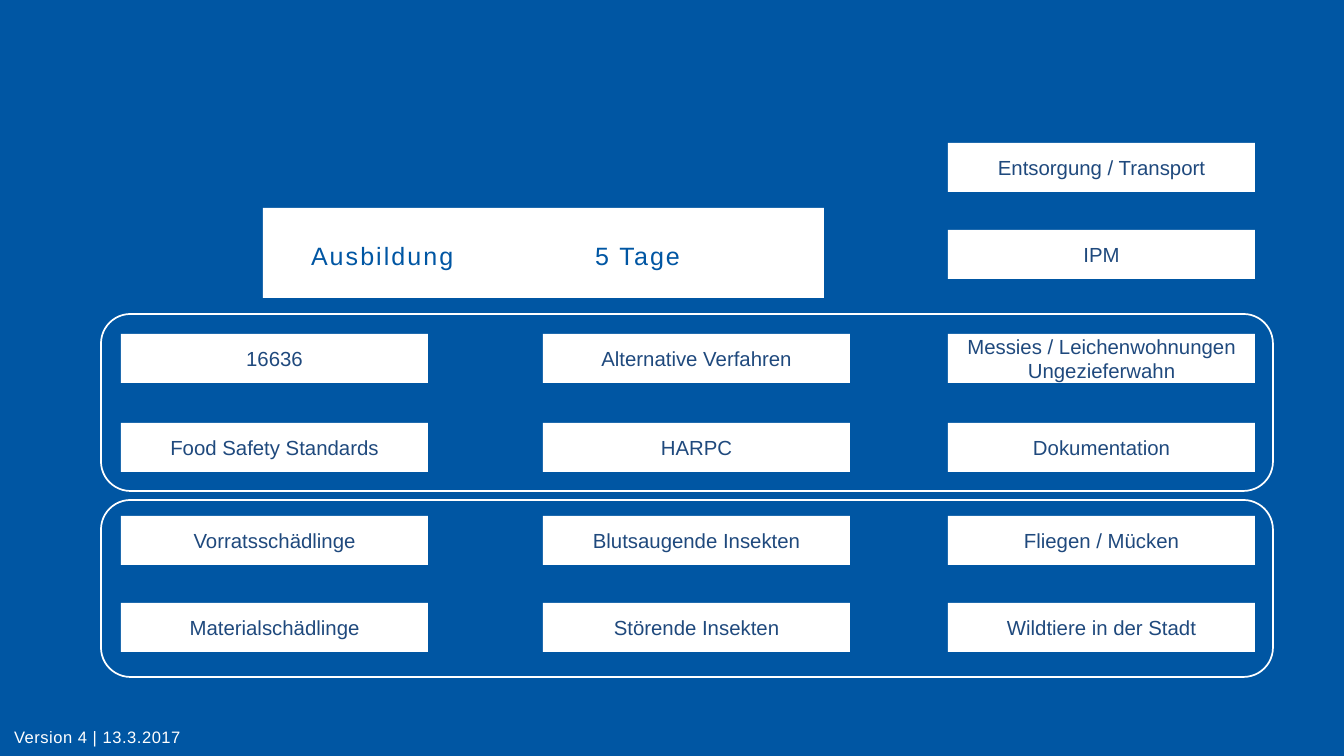
"""Build the slide of training modules grouped around a five-day course."""
from lxml import etree
from pptx import Presentation
from pptx import util as u
from pptx.dml.color import RGBColor
from pptx.enum import shapes, text
from pptx.oxml.ns import qn

COLOURS = {"blue": "0056A3", "navy": "1F497D", "white": "FFFFFF"}
WIDTH, HEIGHT = 1344, 756
COLUMNS = (121, 543, 948)
MODULES = {
    143: ("", "", "Entsorgung / Transport"),
    230: ("", "", "IPM"),
    334: ("16636", "Alternative Verfahren", "Messies / Leichenwohnungen Ungezieferwahn"),
    423: ("Food Safety Standards", "HARPC", "Dokumentation"),
    516: ("Vorratsschädlinge", "Blutsaugende Insekten", "Fliegen / Mücken"),
    603: ("Materialschädlinge", "Störende Insekten", "Wildtiere in der Stadt"),
}


class Deck:
    """Holds the style and the current slide."""
    font = "Arial"
    scale = 14961

    def __init__(self):
        self.presentation = Presentation()
        self.presentation.slide_width = self.px(WIDTH)
        self.presentation.slide_height = self.px(HEIGHT)
        self.slide = self.presentation.slides.add_slide(self.presentation.slide_layouts[6])
        self.paint(self.slide.background.fill, "blue")

    def px(self, length):
        return u.Emu(length * self.scale)

    def paint(self, fill, colour):
        fill.solid()
        fill.fore_color.rgb = RGBColor.from_string(COLOURS[colour])

    def place(self, box):
        return [self.px(length) for length in box]

    def add_words(self, shape, words, size, colour, spacing=0):
        frame = shape.text_frame
        frame.word_wrap = True
        frame.margin_left = frame.margin_right = frame.margin_top = frame.margin_bottom = 0
        paragraph = frame.paragraphs[0]
        run = paragraph.add_run()
        run.text = words
        run.font.name = self.font
        run.font.size = u.Pt(size)
        run.font.color.rgb = RGBColor.from_string(COLOURS[colour])
        if spacing:
            run._r.get_or_add_rPr().set("spc", str(spacing))
        return paragraph

    def panel(self, *box):
        shape = self.slide.shapes.add_shape(shapes.MSO_SHAPE.RECTANGLE, *self.place(box))
        shape.shadow.inherit = False
        self.paint(shape.fill, "white")
        shape.line.fill.background()
        return shape

    def module(self, left, top, words):
        shape = self.panel(left, top, 307, 49)
        shape.text_frame.vertical_anchor = text.MSO_ANCHOR.MIDDLE
        self.add_words(shape, words, 24, "navy").alignment = text.PP_ALIGN.CENTER

    def frame(self, *box):
        shape = self.slide.shapes.add_shape(shapes.MSO_SHAPE.ROUNDED_RECTANGLE, *self.place(box))
        shape.shadow.inherit = False
        shape.fill.background()
        self.paint(shape.line.fill, "white")
        shape.line.width = u.Pt(2)

    def label(self, box, words, size, colour, spacing, tab=None):
        shape = self.slide.shapes.add_textbox(*self.place(box))
        paragraph = self.add_words(shape, words, size, colour, spacing)
        if tab:
            tabs = etree.SubElement(paragraph._p.get_or_add_pPr(), qn("a:tabLst"))
            etree.SubElement(tabs, qn("a:tab"), pos=str(self.px(tab)), algn="l")
        return paragraph


def main():
    deck = Deck()
    deck.panel(263, 208, 561, 90)
    deck.label((311, 240, 438, 31), "Ausbildung\t5 Tage", 29.5, "blue", 240, tab=284)
    for top, row in MODULES.items():
        for left, words in zip(COLUMNS, row):
            if words:
                deck.module(left, top, words)
    version = deck.label((14, 729, 378, 18), "Version 4 | 13.3.2017", 19.5, "white", 60)
    version.line_spacing = u.Pt(20.9)
    for top in (314, 500):
        deck.frame(101, top, 1172, 177)
    deck.presentation.save("out.pptx")


if __name__ == "__main__":
    main()
